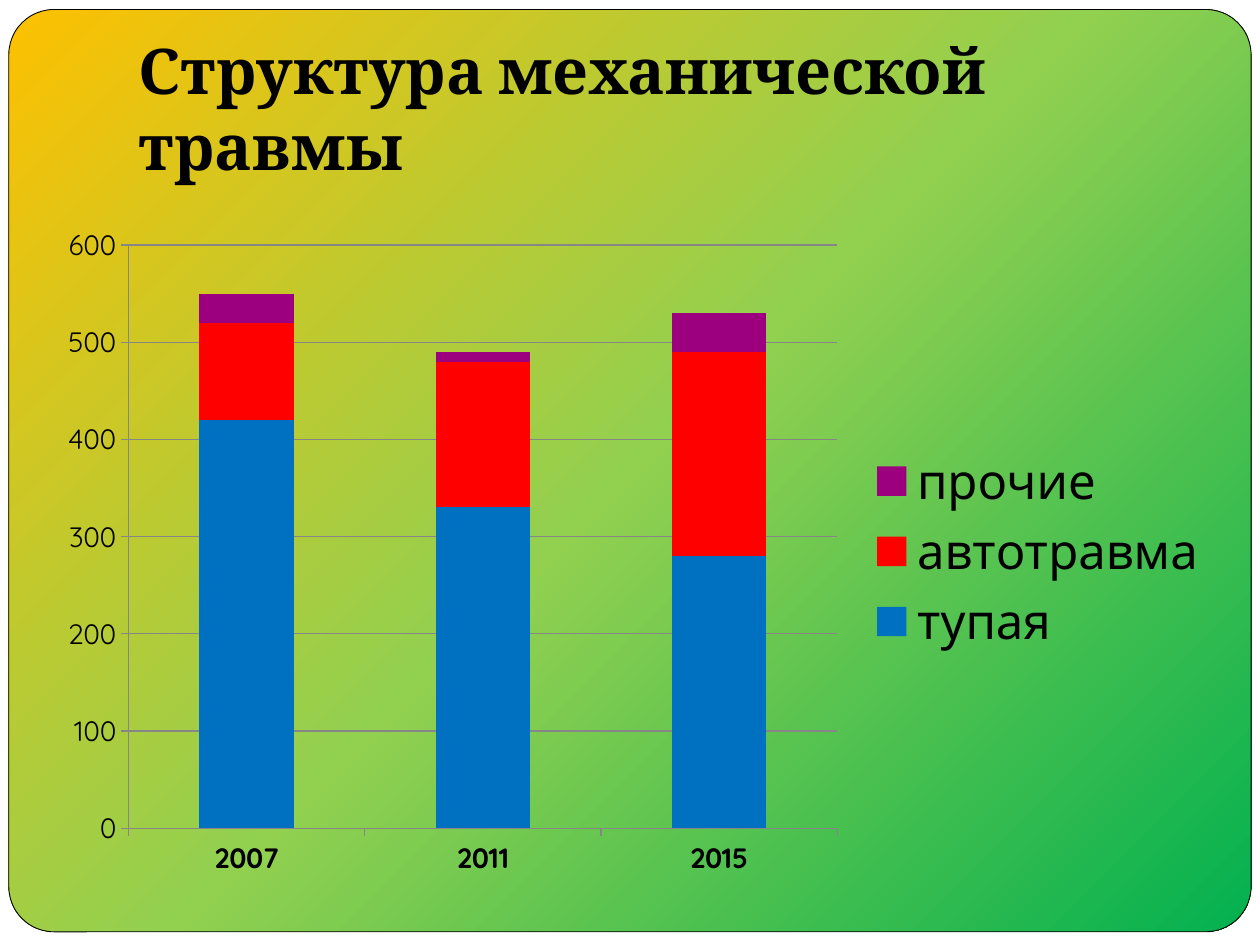
import pptx
import pptx.chart.data
import pptx.dml.color
import pptx.enum.chart
import pptx.enum.shapes
import pptx.enum.text
import pptx.oxml
import pptx.oxml.ns
import pptx.util

BLACK, WHITE, AXIS_GREY = "000000", "FFFFFF", "868686"
YEARS = ["2007", "2011", "2015"]
INJURIES = [
    ("тупая", [420, 330, 280], "0070C0"),
    ("автотравма", [100, 150, 210], "FF0000"),
    ("прочие", [30, 10, 40], "9C007F"),
]
NAMESPACES = pptx.oxml.ns.nsdecls("a", "c")
GRADIENT = f"""<a:gradFill {NAMESPACES} rotWithShape="1"><a:gsLst>
<a:gs pos="0"><a:srgbClr val="00B050"/></a:gs>
<a:gs pos="50000"><a:srgbClr val="92D050"/></a:gs>
<a:gs pos="100000"><a:srgbClr val="FFC000"><a:alpha val="59000"/></a:srgbClr></a:gs>
</a:gsLst><a:path path="circle"><a:fillToRect l="100000" t="100000"/></a:path></a:gradFill>"""
CLEAR_AREA = f"<c:spPr {NAMESPACES}><a:noFill/><a:ln><a:noFill/></a:ln></c:spPr>"


def colour(value):
    return pptx.dml.color.RGBColor.from_string(value)


class SlideBuilder:
    title_font = "Cambria"
    chart_font = "Quicksand"

    def __init__(self, deck):
        self.width, self.height = deck.slide_width, deck.slide_height
        self.page = deck.slides.add_slide(deck.slide_layouts[5])

    def area(self, left, top, width, height):
        return (int(left * self.width), int(top * self.height),
                int(width * self.width), int(height * self.height))

    def background(self):
        self.page.background.fill.gradient()
        fill = self.page.element.find(".//" + pptx.oxml.ns.qn("a:gradFill"))
        fill.getparent().replace(fill, pptx.oxml.parse_xml(GRADIENT))

    def panel(self, kind, share):
        box = self.page.shapes.add_shape(kind, *self.area(*share))
        box.shadow.inherit = False
        return box

    def white_sheet(self):
        sheet = self.panel(pptx.enum.shapes.MSO_SHAPE.RECTANGLE, (0, 0, 1, 1))
        sheet.fill.solid()
        sheet.fill.fore_color.rgb = colour(WHITE)
        sheet.line.fill.background()

    def gradient_card(self, share):
        card = self.panel(pptx.enum.shapes.MSO_SHAPE.ROUNDED_RECTANGLE, share)
        card.adjustments[0] = 0.049
        card.element.set("useBgFill", "1")
        card.line.color.rgb = colour(BLACK)
        card.line.width = pptx.util.Pt(0.5)

    def title(self, text, share):
        box = self.page.shapes.title
        box.element.getparent().append(box.element)
        box.left, box.top, box.width, box.height = self.area(*share)
        frame = box.text_frame
        frame.word_wrap = True
        frame.auto_size = pptx.enum.text.MSO_AUTO_SIZE.NONE
        frame.vertical_anchor = pptx.enum.text.MSO_ANCHOR.BOTTOM
        frame.margin_left = frame.margin_right = pptx.util.Inches(0.1)
        frame.margin_top = pptx.util.Inches(0.05)
        frame.margin_bottom = pptx.util.Inches(0.1)
        para = frame.paragraphs[0]
        para.alignment = pptx.enum.text.PP_ALIGN.LEFT
        span = para.add_run()
        span.text = text
        self.style(span.font, 36, self.title_font, True)

    def style(self, font, size, name, bold=False):
        font.size = pptx.util.Pt(size)
        font.name = name
        font.bold = bold
        font.color.rgb = colour(BLACK)

    def axis(self, axis, bold=False):
        axis.major_tick_mark = pptx.enum.chart.XL_TICK_MARK.OUTSIDE
        axis.minor_tick_mark = pptx.enum.chart.XL_TICK_MARK.NONE
        axis.format.line.color.rgb = colour(AXIS_GREY)
        self.style(axis.tick_labels.font, 16, self.chart_font, bold)

    def stacked_chart(self, categories, series_list, share):
        data = pptx.chart.data.CategoryChartData()
        data.categories = categories
        for name, values, _ in series_list:
            data.add_series(name, values)
        chart = self.page.shapes.add_chart(
            pptx.enum.chart.XL_CHART_TYPE.COLUMN_STACKED, *self.area(*share), data).chart
        self.style(chart.font, 10, self.chart_font)
        text_style = chart.element.find(pptx.oxml.ns.qn("c:txPr"))
        text_style.addprevious(pptx.oxml.parse_xml(CLEAR_AREA))
        chart.has_title = False
        plot = chart.plots[0]
        plot.gap_width, plot.overlap, plot.vary_by_categories = 150, 100, False
        for series, (_, _, fill) in zip(plot.series, series_list):
            series.format.fill.solid()
            series.format.fill.fore_color.rgb = colour(fill)
        self.axis(chart.category_axis, bold=True)
        self.axis(chart.value_axis)
        chart.value_axis.has_major_gridlines = True
        chart.value_axis.major_gridlines.format.line.color.rgb = colour(AXIS_GREY)
        chart.has_legend = True
        chart.legend.position = pptx.enum.chart.XL_LEGEND_POSITION.RIGHT
        chart.legend.include_in_layout = False
        self.style(chart.legend.font, 28, self.chart_font)


def main():
    deck = pptx.Presentation()
    deck.slide_width = pptx.util.Inches(10)
    deck.slide_height = pptx.util.Inches(7.5)
    builder = SlideBuilder(deck)
    builder.background()
    builder.white_sheet()
    builder.gradient_card((0.007, 0.01, 0.986, 0.976))
    builder.title("Структура механической травмы", (0.1, 0.04, 0.85, 1 / 6))
    builder.stacked_chart(YEARS, INJURIES, (0.035, 0.227, 0.937, 0.713))
    deck.save("out.pptx")


if __name__ == "__main__":
    main()
